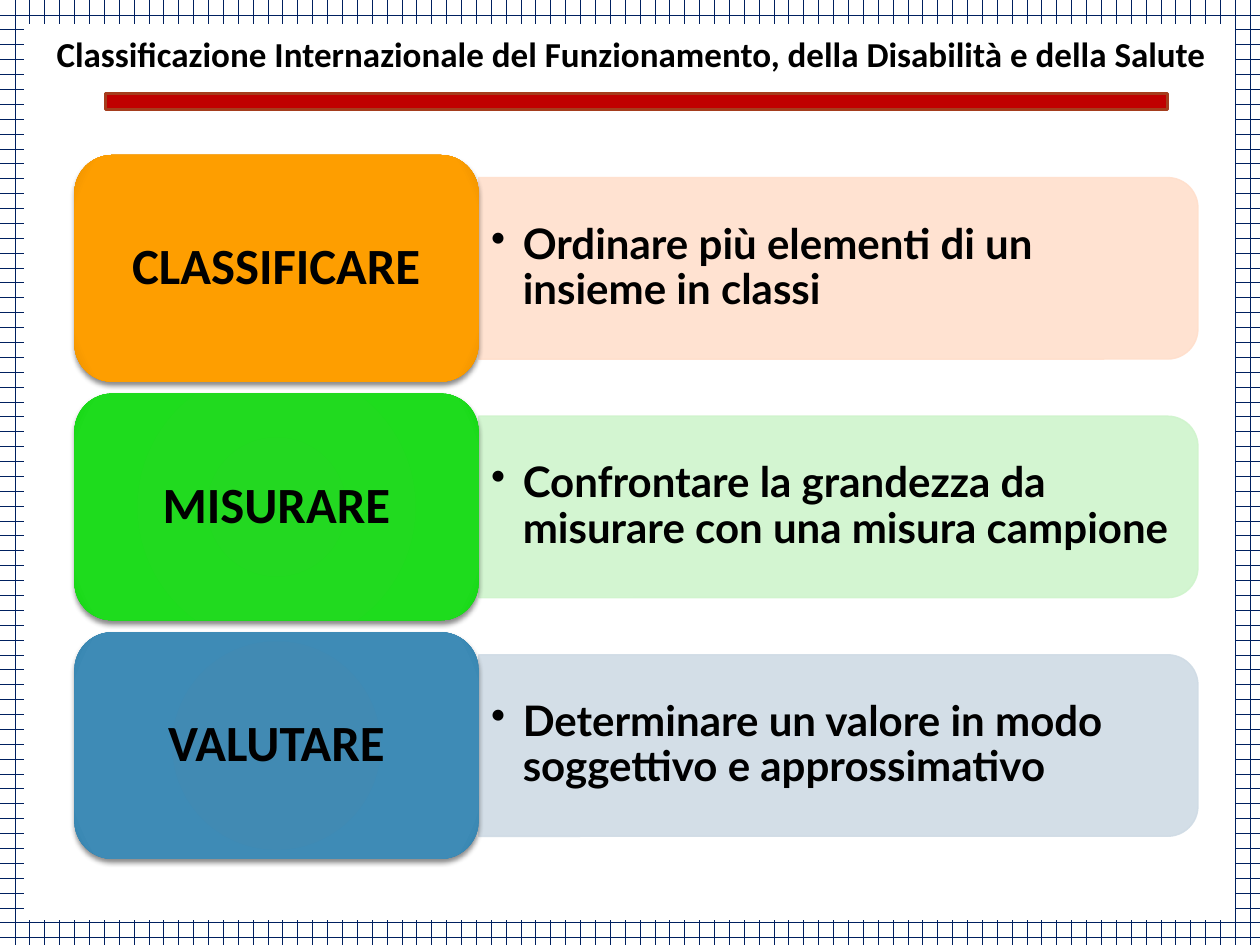
from lxml import etree
from pptx import Presentation
from pptx import util as u
from pptx.dml.color import RGBColor
from pptx.enum import dml, shapes, text
from pptx.oxml import parse_xml
from pptx.oxml.ns import nsdecls, qn

COLORS = {
    "navy": "002060", "white": "FFFFFF", "black": "000000",
    "red": "C00000", "brown": "A53D1D",
    "peach": "FFDFCC", "mint": "CFF4CC", "mist": "CFDBE5",
}
ROWS = [
    ("CLASSIFICARE", "Ordinare più elementi di un insieme in classi",
     "peach", ("FE9E00", "FE9E00", "E78F00")),
    ("MISURARE", "Confrontare la grandezza da misurare con una misura campione",
     "mint", ("23D821", "1EDC1D", "0FD40E")),
    ("VALUTARE", "Determinare un valore in modo soggettivo e approssimativo",
     "mist", ("418AB3", "3E8BB6", "3180AD")),
]
LABEL_LEFT, LABEL_WIDTH, LABEL_HEIGHT = 1.5, 8.15, 4.57
FIRST_MIDDLE, ROW_PITCH = 5.41, 4.81
BAR_LENGTH, BAR_HEIGHT = 14.5, 3.66
BODY_WIDTH, BODY_HEIGHT = 14.33, 3.3


def color(name):
    return RGBColor.from_string(COLORS[name])


def add_box(page, kind, left, top, width, height, fill=None, line=None, weight=1):
    box = page.shapes.add_shape(kind, u.Cm(left), u.Cm(top), u.Cm(width), u.Cm(height))
    box.shadow.inherit = False
    if fill:
        box.fill.solid()
        box.fill.fore_color.rgb = color(fill)
    else:
        box.fill.background()
    if line:
        box.line.color.rgb = color(line)
        box.line.width = u.Pt(weight)
    else:
        box.line.fill.background()
    return box


def write(frame, words, font, size):
    para = frame.paragraphs[0]
    para.text = words
    para.font.name = font
    para.font.size = u.Pt(size)
    para.font.bold = True
    para.font.color.rgb = color("black")
    return para


def add_text(page, words, left, top, width, height, font, size, wrap=True):
    box = page.shapes.add_textbox(u.Cm(left), u.Cm(top), u.Cm(width), u.Cm(height))
    box.text_frame.word_wrap = wrap
    return box.text_frame, write(box.text_frame, words, font, size)


def shade(box, tones):
    stops = "".join(
        f'<a:gs pos="{place}"><a:srgbClr val="{tone}"/></a:gs>'
        for place, tone in zip((0, 90000, 100000), tones))
    gradient = parse_xml(
        f'<a:gradFill {nsdecls("a")} rotWithShape="1"><a:gsLst>{stops}</a:gsLst>'
        '<a:path path="circle"><a:fillToRect l="100000" t="100000" r="100000" b="100000"/>'
        '</a:path></a:gradFill>')
    properties = box._element.spPr
    properties.replace(properties.find(qn("a:noFill")), gradient)
    properties.find(qn("a:effectLst")).append(parse_xml(
        f'<a:outerShdw {nsdecls("a")} blurRad="{u.Pt(3)}" dist="{u.Pt(2)}" dir="5400000" '
        'rotWithShape="0"><a:srgbClr val="000000"><a:alpha val="45000"/></a:srgbClr>'
        '</a:outerShdw>'))


def add_bar(page, middle, tint):
    center = LABEL_LEFT + LABEL_WIDTH + BAR_LENGTH / 2
    bar = add_box(page, shapes.MSO_SHAPE.ROUND_2_SAME_RECTANGLE,
                  center - BAR_HEIGHT / 2, middle - BAR_LENGTH / 2,
                  BAR_HEIGHT, BAR_LENGTH, tint, tint, 0.79)
    bar.rotation = 90
    for tone in bar._element.spPr.iter(qn("a:srgbClr")):
        etree.SubElement(tone, qn("a:alpha")).set("val", "90000")


def add_body(page, middle, words):
    frame, para = add_text(page, words, LABEL_LEFT + LABEL_WIDTH, middle - BODY_HEIGHT / 2,
                           BODY_WIDTH, BODY_HEIGHT, "Lato", 24)
    frame.vertical_anchor = text.MSO_ANCHOR.MIDDLE
    para.level = 1
    para.line_spacing = 0.9
    properties = para._p.get_or_add_pPr()
    properties.set("marL", str(u.Cm(0.64)))
    properties.set("indent", str(u.Cm(-0.64)))
    bullet = parse_xml(f'<a:buChar {nsdecls("a")} char="•"/>')
    properties.find(qn("a:defRPr")).addprevious(bullet)


def add_label(page, middle, words, tones):
    label = add_box(page, shapes.MSO_SHAPE.ROUNDED_RECTANGLE, LABEL_LEFT,
                    middle - LABEL_HEIGHT / 2, LABEL_WIDTH, LABEL_HEIGHT)
    shade(label, tones)
    label.text_frame.vertical_anchor = text.MSO_ANCHOR.MIDDLE
    para = write(label.text_frame, words, "Calibri", 29)
    para.alignment = text.PP_ALIGN.CENTER
    para.line_spacing = 0.9


def add_background(page):
    fill = page.background.fill
    fill.patterned()
    fill.pattern = dml.MSO_PATTERN.HORIZONTAL_BRICK
    fill.fore_color.rgb = color("navy")
    fill.back_color.rgb = color("white")
    add_box(page, shapes.MSO_SHAPE.RECTANGLE, 0.51, 0.51, 24.38, 18.03, "white", "white")


def main():
    deck = Presentation()
    deck.slide_width, deck.slide_height = u.Cm(25.4), u.Cm(19.05)
    page = deck.slides.add_slide(deck.slide_layouts[6])
    add_background(page)
    for index, (name, meaning, tint, tones) in enumerate(ROWS):
        middle = FIRST_MIDDLE + index * ROW_PITCH
        add_bar(page, middle, tint)
        add_body(page, middle, meaning)
        add_label(page, middle, name, tones)
    add_text(page, "Classificazione Internazionale del Funzionamento, "
             "della Disabilità e della Salute",
             0.89, 0.53, 23.88, 1.12, "Calibri", 20, wrap=False)
    add_box(page, shapes.MSO_SHAPE.FLOWCHART_PROCESS, 2.13, 1.88, 21.41, 0.33,
            "red", "brown", 1.5)
    deck.save("out.pptx")


if __name__ == "__main__":
    main()
